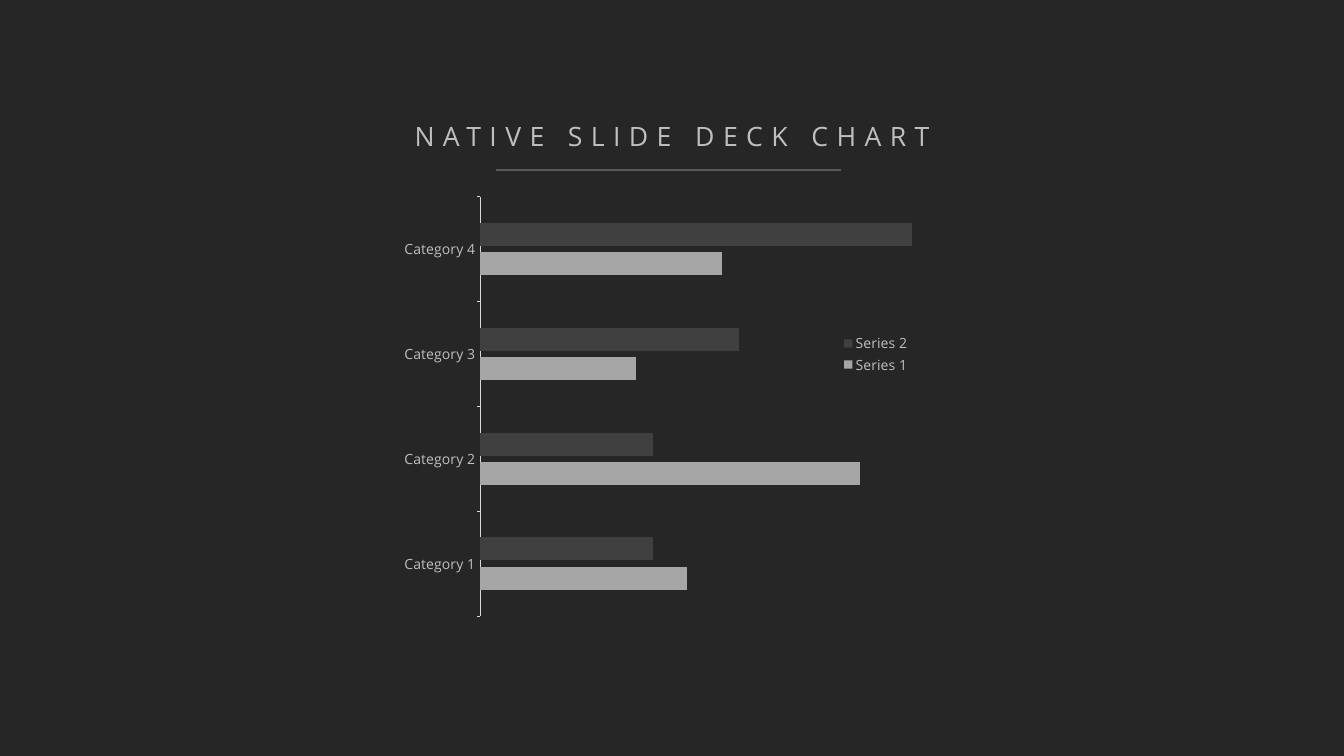
from dataclasses import dataclass

from lxml.etree import SubElement
from pptx import Presentation
from pptx.chart.data import CategoryChartData
from pptx.dml.color import RGBColor
from pptx.enum.chart import XL_CHART_TYPE as ChartType
from pptx.enum.chart import XL_LEGEND_POSITION as LegendPosition
from pptx.enum.chart import XL_TICK_MARK as TickMark
from pptx.enum.shapes import MSO_CONNECTOR as Connector
from pptx.enum.text import MSO_ANCHOR as Anchor
from pptx.enum.text import PP_ALIGN as Align
from pptx.oxml.ns import qn
from pptx.slide import Slide
from pptx.text.text import Font
from pptx.util import Pt

BACKGROUND = RGBColor(0x26, 0x26, 0x26)
TEXT = RGBColor(0xBF, 0xBF, 0xBF)
RULE = RGBColor(0x59, 0x59, 0x59)
AXIS = RGBColor(0xD9, 0xD9, 0xD9)
LIGHT_BAR = RGBColor(0xA6, 0xA6, 0xA6)
DARK_BAR = RGBColor(0x40, 0x40, 0x40)
FONT_NAME = "Open Sans"
CATEGORIES = [f"Category {number}" for number in range(1, 5)]


@dataclass(frozen=True)
class Box:
    left: float
    top: float
    width: float
    height: float


@dataclass(frozen=True)
class BarSeries:
    name: str
    values: tuple[int, ...]
    color: RGBColor


SERIES = [
    BarSeries("Series 1", (48, 88, 36, 56), LIGHT_BAR),
    BarSeries("Series 2", (40, 40, 60, 100), DARK_BAR),
]
TITLE_BOX = Box(556, 167, 808.5, 53.3)
CHART_BOX = Box(556, 268.5, 1000, 624.25)
PLOT_AREA = Box(0.13, 0.02, 0.74, 0.96)
LEGEND_AREA = Box(0.64, 0.33, 0.11, 0.1)


def style_font(font: Font, size: float) -> None:
    font.name = FONT_NAME
    font.size = Pt(size)
    font.bold = False
    font.color.rgb = TEXT


def add_title(slide: Slide, box: Box, text: str) -> None:
    title = slide.shapes.title
    title.left, title.top = Pt(box.left), Pt(box.top)
    title.width, title.height = Pt(box.width), Pt(box.height)
    frame = title.text_frame
    frame.word_wrap = False
    frame.vertical_anchor = Anchor.MIDDLE
    frame.margin_top = frame.margin_bottom = 0
    paragraph = frame.paragraphs[0]
    paragraph.alignment = Align.CENTER
    paragraph.line_spacing = 1.0
    run = paragraph.add_run()
    run.text = text
    style_font(run.font, 38)
    run.font._element.set("spc", "1200")


def add_rule(slide: Slide, left: float, right: float, top: float) -> None:
    rule = slide.shapes.add_connector(
        Connector.STRAIGHT, Pt(left), Pt(top), Pt(right), Pt(top)
    )
    rule.line.color.rgb = RULE
    rule.line.width = Pt(3)
    SubElement(rule._element.spPr, qn("a:effectLst"))


def set_layout(element, area: Box, inner: bool = False) -> None:
    layout = element.find(qn("c:layout"))
    if layout is None:
        layout = SubElement(element, qn("c:layout"))
        if inner:
            element.insert(0, layout)
        else:
            element.find(qn("c:legendPos")).addnext(layout)
    manual = SubElement(layout, qn("c:manualLayout"))
    settings = {"layoutTarget": "inner"} if inner else {}
    settings |= {"xMode": "edge", "yMode": "edge"}
    settings |= {"x": area.left, "y": area.top, "w": area.width, "h": area.height}
    for tag, value in settings.items():
        SubElement(manual, qn(f"c:{tag}")).set("val", str(value))


def add_bar_chart(slide: Slide, box: Box, series_list: list[BarSeries]) -> None:
    data = CategoryChartData()
    data.categories = CATEGORIES
    for series in series_list:
        data.add_series(series.name, series.values)
    chart = slide.shapes.add_chart(
        ChartType.BAR_CLUSTERED,
        Pt(box.left), Pt(box.top), Pt(box.width), Pt(box.height), data,
    ).chart
    chart.has_title = False
    style_font(chart.font, 20)

    plot = chart.plots[0]
    plot.vary_by_categories = False
    plot.gap_width = 228
    plot.overlap = -28
    for bars, series in zip(plot.series, series_list):
        bars.format.fill.solid()
        bars.format.fill.fore_color.rgb = series.color

    category_axis = chart.category_axis
    category_axis.major_tick_mark = TickMark.OUTSIDE
    category_axis.has_major_gridlines = False
    category_axis.format.line.color.rgb = AXIS
    category_axis.format.line.width = Pt(0.75)
    style_font(category_axis.tick_labels.font, 20)

    value_axis = chart.value_axis
    value_axis.minimum_scale = 0
    value_axis.maximum_scale = 120
    value_axis.has_major_gridlines = False
    value_axis.visible = False

    chart.has_legend = True
    legend = chart.legend
    legend.position = LegendPosition.RIGHT
    legend.include_in_layout = False
    style_font(legend.font, 20)
    set_layout(plot._element.getparent(), PLOT_AREA, inner=True)
    set_layout(legend._element, LEGEND_AREA)


def main() -> None:
    presentation = Presentation()
    presentation.slide_width = Pt(1920)
    presentation.slide_height = Pt(1080)
    slide = presentation.slides.add_slide(presentation.slide_layouts[5])
    slide.background.fill.solid()
    slide.background.fill.fore_color.rgb = BACKGROUND
    add_title(slide, TITLE_BOX, "NATIVE SLIDE DECK CHART")
    add_rule(slide, 708, 1201.5, 243.5)
    add_bar_chart(slide, CHART_BOX, SERIES)
    presentation.save("out.pptx")


if __name__ == "__main__":
    main()
